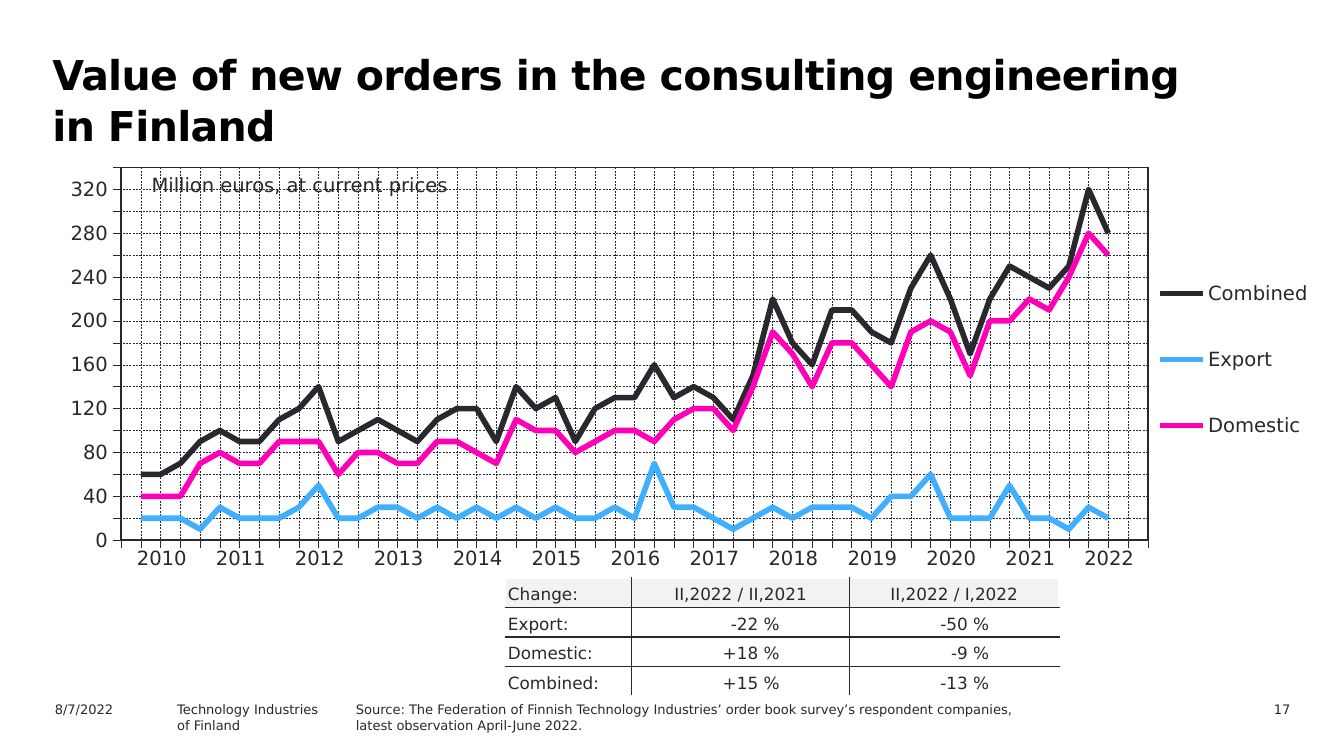
from pptx import Presentation
from pptx.chart.data import CategoryChartData
from pptx.dml.color import RGBColor
from pptx.enum.chart import XL_CHART_TYPE as CT, XL_LEGEND_POSITION as LP
from pptx.enum.chart import XL_MARKER_STYLE as MS
from pptx.enum.chart import XL_TICK_LABEL_POSITION as TLP, XL_TICK_MARK as TM
from pptx.enum.dml import MSO_LINE
from pptx.enum.text import MSO_ANCHOR as MA, PP_ALIGN as PA
from pptx.oxml import parse_xml
from pptx.oxml.ns import nsdecls, qn
from pptx.util import Inches, Pt

INK = RGBColor(0x29, 0x28, 0x2E)
BLUE = RGBColor(0x40, 0xAF, 0xFF)
PINK = RGBColor(0xFF, 0x00, 0xB8)
BLACK = RGBColor(0, 0, 0)
WHITE = RGBColor(0xFF, 0xFF, 0xFF)
GREY = RGBColor(0xF2, 0xF2, 0xF2)
FONT = "DejaVu Sans"
NO_STYLE = "{2D5ABB26-0587-4C30-8999-92F81FD0307C}"


def set_font(font, size, color=INK, bold=False):
    values = {"name": FONT, "size": Pt(size), "bold": bold}
    for key, value in values.items():
        setattr(font, key, value)
    font.color.rgb = color


def set_layout(parent, index, x, y, w, h, target=""):
    for old in parent.findall(qn("c:layout")):
        parent.remove(old)
    parent.insert(index, parse_xml(
        f'<c:layout {nsdecls("c")}><c:manualLayout>{target}'
        '<c:xMode val="edge"/><c:yMode val="edge"/>'
        f'<c:x val="{x}"/><c:y val="{y}"/><c:w val="{w}"/><c:h val="{h}"/>'
        '</c:manualLayout></c:layout>'))


# Slide of 16 by 9
prs = Presentation()
prs.slide_width = Inches(10)
prs.slide_height = prs.slide_width * 9 // 16
s = prs.slides.add_slide(prs.slide_layouts[5])

# Title
title = s.shapes.title
title.left, title.top = Inches(0.27), Inches(0.31)
title.width, title.height = Inches(8.74), Inches(0.71)
tf = title.text_frame
tf.text = "Value of new orders in the consulting engineering in Finland"
tf.vertical_anchor = MA.TOP
tf.word_wrap = True
p = tf.paragraphs[0]
p.alignment = PA.LEFT
p.line_spacing = Pt(27)
p._p.get_or_add_pPr().set("marL", str(Inches(0.02)))
r = p.runs[0]
set_font(r.font, 22, BLACK, True)
r._r.get_or_add_rPr().set("spc", "-34")

# Chart data, one value a quarter
orders = {
    "Combined": (INK, [
        60, 60, 70, 90, 100, 90, 90, 110, 120, 140, 90, 100, 110, 100, 90, 110, 120,
        120, 90, 140, 120, 130, 90, 120, 130, 130, 160, 130, 140, 130, 110, 150,
        220, 180, 160, 210, 210, 190, 180, 230, 260, 220, 170, 220, 250, 240, 230,
        250, 320, 280]),
    "Export": (BLUE, [
        20, 20, 20, 10, 30, 20, 20, 20, 30, 50, 20, 20, 30, 30, 20, 30, 20, 30, 20,
        30, 20, 30, 20, 20, 30, 20, 70, 30, 30, 20, 10, 20, 30, 20, 30, 30, 30, 20,
        40, 40, 60, 20, 20, 20, 50, 20, 20, 10, 30, 20]),
    "Domestic": (PINK, [
        40, 40, 40, 70, 80, 70, 70, 90, 90, 90, 60, 80, 80, 70, 70, 90, 90, 80, 70,
        110, 100, 100, 80, 90, 100, 100, 90, 110, 120, 120, 100, 140, 190, 170, 140,
        180, 180, 160, 140, 190, 200, 190, 150, 200, 200, 220, 210, 240, 280, 260]),
}
data = CategoryChartData()
data.categories = [str(n) for n in range(1, 51)]
for name, (color, values) in orders.items():
    data.add_series(name, [None, *values, None, None])

# Line chart
chart = s.shapes.add_chart(CT.LINE, Inches(0.2), Inches(1.11), Inches(9.61),
                           Inches(3.33), data).chart
set_font(chart.font, 10.5)
chart.has_title = False
plot = chart.plots[0]
plot.vary_by_categories = False
for series, (color, values) in zip(plot.series, orders.values()):
    series.smooth = False
    series.marker.style = MS.NONE
    series.format.line.color.rgb = color
    series.format.line.width = Pt(3)

cat_axis, val_axis = chart.category_axis, chart.value_axis
for axis in (cat_axis, val_axis):
    axis.has_major_gridlines = True
    axis.major_tick_mark, axis.minor_tick_mark = TM.OUTSIDE, TM.NONE
    grid = axis.major_gridlines.format.line
    for line in (axis.format.line, grid):
        line.color.rgb = INK
        line.width = Pt(0.25)
    grid.dash_style = MSO_LINE.DASH
cat_axis.tick_label_position = TLP.NONE
scale = {"minimum_scale": 0, "maximum_scale": 340, "major_unit": 20}
for key, value in scale.items():
    setattr(val_axis, key, value)
set_font(val_axis.tick_labels.font, 10.5)
val_axis.tick_labels.number_format = "#,##0"
val_axis.tick_labels.number_format_is_linked = False

# Points stand on the tick marks
val_ax = val_axis._element
for old in val_ax.findall(qn("c:crossBetween")):
    val_ax.remove(old)
val_ax.find(qn("c:crosses")).addnext(
    parse_xml(f'<c:crossBetween {nsdecls("c")} val="midCat"/>'))

# Plot frame and legend
plot_area = chart._chartSpace.chart.plotArea
set_layout(plot_area, 0, 0.073, 0.041, 0.795, 0.833,
           '<c:layoutTarget val="inner"/>')
plot_area.append(parse_xml(
    f'<c:spPr {nsdecls("c", "a")}><a:noFill/><a:ln w="12700"><a:solidFill>'
    f'<a:srgbClr val="{INK}"/></a:solidFill></a:ln></c:spPr>'))
chart.has_legend = True
legend = chart.legend
legend.position = LP.RIGHT
legend.include_in_layout = False
set_font(legend.font, 10.5)
set_layout(legend._element, 1, 0.88, 0.2, 0.12, 0.54)

# Chart caption, page number and footer
texts = [
    (1.03, 1.24, 2.44, 0.27, 10.5, PA.LEFT, False,
     ["Million euros, at current prices"]),
    (8.76, 5.17, 0.94, 0.18, 7, PA.RIGHT, True, ["17"]),
    (2.55, 5.17, 5.2, 0.4, 7, PA.LEFT, True,
     ["Source: The Federation of Finnish Technology Industries’ order book "
      "survey’s respondent companies, latest observation April-June 2022."]),
    (1.22, 5.17, 1.8, 0.18, 7, PA.LEFT, True,
     ["Technology Industries", "of Finland"]),
    (0.31, 5.17, 1, 0.18, 7, PA.LEFT, True, ["8/7/2022"]),
]
for x, y, w, h, size, align, wrap, lines in texts:
    tf = s.shapes.add_textbox(Inches(x), Inches(y), Inches(w), Inches(h)).text_frame
    tf.word_wrap = wrap
    tf.text = "\n".join(lines)
    for p in tf.paragraphs:
        p.alignment = align
        set_font(p.runs[0].font, size)

# Change table and row of years under the axis
changes = [["Change:", "II,2022 / II,2021", "II,2022 / I,2022"],
           ["Export:", "-22 %", "-50 %"],
           ["Domestic:", "+18 %", "-9 %"],
           ["Combined:", "+15 %", "-13 %"]]
years = [[str(year) for year in range(2010, 2023)]]
tables = []
for rows, x, y, widths, height in (
        (changes, 3.76, 4.3, [0.94, 1.62, 1.56], 0.22),
        (years, 0.91, 4.02, [7.64 / 13] * 13, 0.31)):
    frame = s.shapes.add_table(len(rows), len(widths), Inches(x), Inches(y),
                               Inches(sum(widths)), Inches(height * len(rows)))
    table = frame.table
    table.first_row = table.horz_banding = False
    table._tbl.tblPr.find(qn("a:tableStyleId")).text = NO_STYLE
    for column, width in zip(table.columns, widths):
        column.width = Inches(width)
    for i, row in enumerate(rows):
        table.rows[i].height = Inches(height)
        for j, text in enumerate(row):
            cell = table.cell(i, j)
            cell.text = text
            cell.fill.background()
            p = cell.text_frame.paragraphs[0]
            p.alignment = PA.CENTER
            set_font(p.runs[0].font, 10.5)
    tables.append(table)

# Change table: alignment, shading and inner rules
for i in range(4):
    for j in range(3):
        cell = tables[0].cell(i, j)
        cell.vertical_anchor = MA.BOTTOM
        for side in ("left", "right", "top", "bottom"):
            setattr(cell, f"margin_{side}", Inches(0.02))
        p = cell.text_frame.paragraphs[0]
        p.runs[0].font.size = Pt(9)
        if j == 0:
            p.alignment = PA.LEFT
        elif i > 0:
            p.alignment = PA.RIGHT
            cell.margin_right = Inches(0.52)
        cell.fill.solid()
        cell.fill.fore_color.rgb = WHITE if i else GREY
        outer = {"lnL": j == 0, "lnR": j == 2, "lnT": i == 0, "lnB": i == 3}
        for k, (tag, is_outer) in enumerate(outer.items()):
            cell._tc.get_or_add_tcPr().insert(k, parse_xml(
                f'<a:{tag} {nsdecls("a")} w="12700"><a:solidFill><a:srgbClr '
                f'val="{WHITE if is_outer else INK}"/></a:solidFill></a:{tag}>'))

prs.save("out.pptx")
